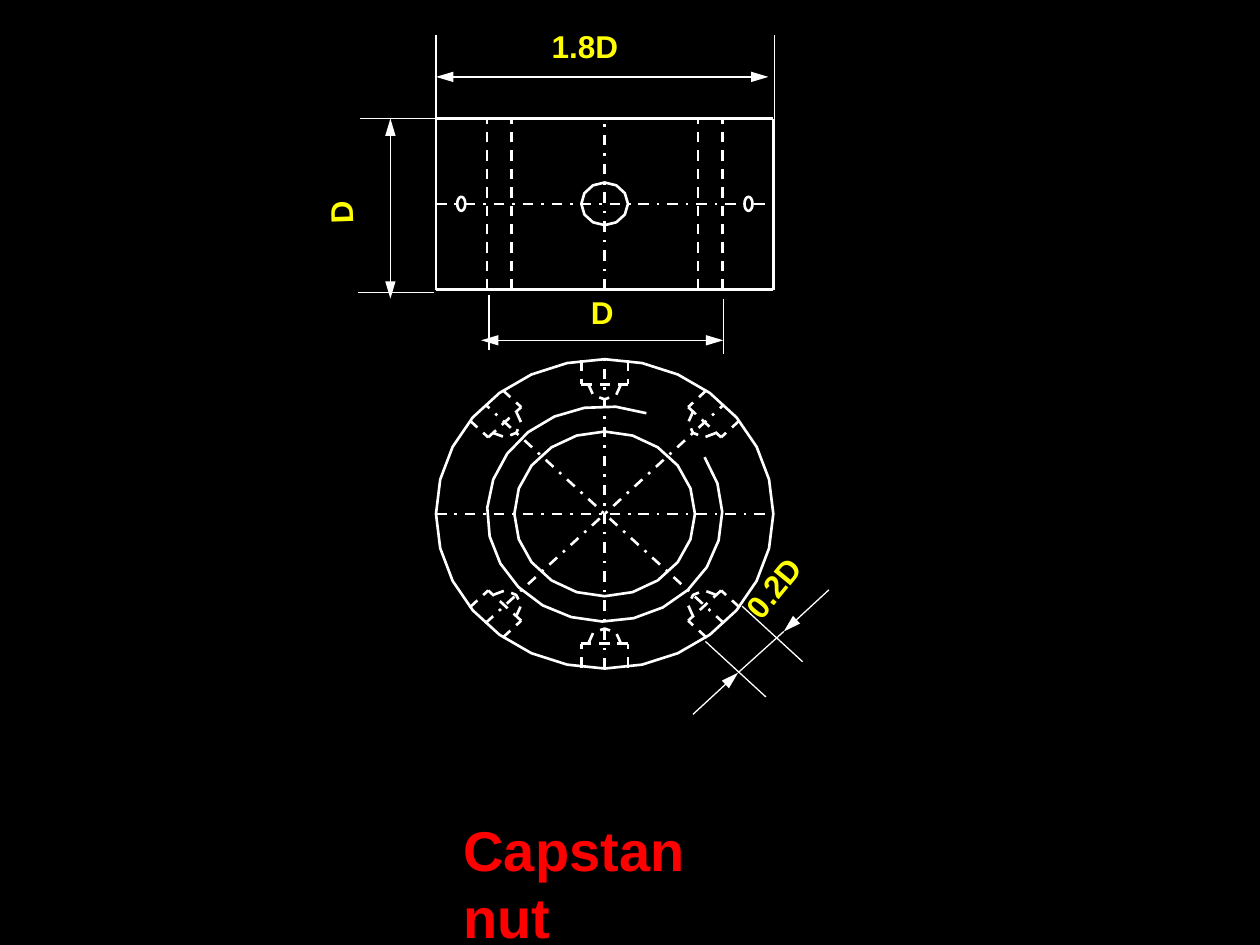
from dataclasses import dataclass
from math import cos, radians, sin

from lxml.etree import SubElement
from pptx import Presentation
from pptx.dml.color import RGBColor
from pptx.enum.dml import MSO_LINE
from pptx.enum.shapes import MSO_CONNECTOR
from pptx.enum.text import MSO_ANCHOR, MSO_AUTO_SIZE, PP_ALIGN
from pptx.oxml.ns import qn
from pptx.util import Cm, Pt


@dataclass(frozen=True)
class Theme:
    """Colours, type sizes and line widths of the drawing."""
    back: RGBColor = RGBColor(0, 0, 0)
    ink: RGBColor = RGBColor(255, 255, 255)
    label: RGBColor = RGBColor(255, 255, 0)
    title: RGBColor = RGBColor(255, 0, 0)
    font: str = "Arial"
    title_size: Pt = Pt(32)
    label_size: Pt = Pt(18)
    outline: Pt = Pt(1.5)
    thin: Pt = Pt(0.75)


THEME = Theme()
CX, PLAN_Y, RADIUS, SQUASH = 12.19, 10.36, 3.4, 0.917
TOP, MID, BOTTOM = 2.39, 4.11, 5.84
LEFT, RIGHT = CX - RADIUS, CX + RADIUS


def apply(obj, formats):
    """Set each named attribute of an object."""
    for name, value in formats.items():
        setattr(obj, name, value)


def style_line(shape, width, dash=None):
    """Give a shape's line its colour, width and dash."""
    shape.line.color.rgb = THEME.ink
    apply(shape.line, {"width": width, "dash_style": dash})


def add_line(s, start, end, width=THEME.outline, dash=None, ends=()):
    """Draw a straight line with arrowheads at the named ends."""
    line = s.shapes.add_connector(
        MSO_CONNECTOR.STRAIGHT, *(Cm(v) for v in (*start, *end)))
    style_line(line, width, dash)
    spPr = line._element.spPr
    for end_name in ends:
        SubElement(spPr.get_or_add_ln(), qn(f"a:{end_name}"),
                   type="triangle", w="med", len="lg")
    SubElement(spPr, qn("a:effectLst"))


def add_outline(s, points, closed=True, dash=None):
    """Draw an unfilled outline through the points."""
    first, *rest = [(Cm(x), Cm(y)) for x, y in points]
    builder = s.shapes.build_freeform(*first)
    builder.add_line_segments(rest, close=closed)
    sp = builder.convert_to_shape()
    sp.fill.background()
    sp.shadow.inherit = False
    style_line(sp, THEME.outline, dash)


def arc_points(cx, cy, rx, ry, sides, start=0, sweep=360):
    """Return the corners of a faceted arc, counterclockwise."""
    angles = [radians(start + sweep * i / sides) for i in range(sides + 1)]
    return [(cx + rx * cos(a), cy - ry * sin(a)) for a in angles]


def plan_point(angle, radial, across=0):
    """Place a point given along and across a radius of the plan view."""
    a = radians(angle)
    return (CX + radial * cos(a) - across * sin(a),
            PLAN_Y - SQUASH * (radial * sin(a) + across * cos(a)))


def write_text(tf, text, size, color):
    """Write one bold line of text."""
    p = tf.paragraphs[0]
    p.alignment = PP_ALIGN.LEFT
    r = p.add_run()
    r.text = text
    apply(r.font, {"name": THEME.font, "size": size, "bold": True})
    r.font.color.rgb = color


def add_label(s, text, left, top, width, rotation=0):
    """Add a dimension label."""
    sp = s.shapes.add_textbox(Cm(left), Cm(top), Cm(width), Cm(1.02))
    sp.rotation = rotation
    apply(sp.text_frame, {"word_wrap": False,
                          "auto_size": MSO_AUTO_SIZE.SHAPE_TO_FIT_TEXT})
    write_text(sp.text_frame, text, THEME.label_size, THEME.label)


def set_title(s, text):
    """Place and format the title."""
    sp = s.shapes.title
    apply(sp, {"left": Cm(9.09), "top": Cm(16.31),
               "width": Cm(7), "height": Cm(1.6)})
    apply(sp.text_frame, {"word_wrap": True, "auto_size": MSO_AUTO_SIZE.NONE,
                          "vertical_anchor": MSO_ANCHOR.TOP})
    write_text(sp.text_frame, text, THEME.title_size, THEME.title)


def add_pocket(s, angle):
    """Draw one hidden radial hole with its drilled tip."""
    mouth, floor, half = 3.38, 2.85, 0.47
    for side in (-half, half):
        add_line(s, plan_point(angle, mouth, side),
                 plan_point(angle, floor, side), dash=MSO_LINE.DASH)
    add_line(s, plan_point(angle, floor, half),
             plan_point(angle, floor, -half), dash=MSO_LINE.DASH)
    tip = ((floor, 0.33), (2.61, 0.23), (2.52, 0),
           (2.61, -0.23), (floor, -0.33))
    add_outline(s, [plan_point(angle, *p) for p in tip], False, MSO_LINE.DASH)


def draw_plan(s):
    """Draw the view along the axis of the nut."""
    add_outline(s, arc_points(CX, PLAN_Y, RADIUS, RADIUS * SQUASH, 28)[:-1])
    add_outline(s, arc_points(CX, PLAN_Y, 1.82, 1.66, 20)[:-1])
    add_outline(s, arc_points(CX, PLAN_Y, 2.37, 2.17, 21, 69.2, 322.6), False)
    for angle in (180, 225, 270, 315):
        add_line(s, plan_point(angle, RADIUS), plan_point(angle, -RADIUS),
                 dash=MSO_LINE.DASH_DOT)
    for angle in (45, 90, 135, 225, 270, 315):
        add_pocket(s, angle)


def draw_elevation(s):
    """Draw the side view of the nut."""
    for y in (TOP, BOTTOM):
        add_line(s, (LEFT, y), (RIGHT, y))
    for x in (LEFT, RIGHT):
        add_line(s, (x, BOTTOM), (x, TOP))
    for offset in (-2.37, -1.88, 1.88, 2.37):
        add_line(s, (CX + offset, BOTTOM), (CX + offset, TOP),
                 dash=MSO_LINE.DASH)
    add_line(s, (LEFT, MID), (RIGHT, MID), dash=MSO_LINE.DASH_DOT)
    add_line(s, (CX, BOTTOM), (CX, TOP), dash=MSO_LINE.DASH_DOT)
    for x, rx, ry, sides in ((CX, 0.47, 0.43, 12), (9.3, 0.08, 0.14, 36),
                             (15.09, 0.08, 0.14, 36)):
        add_outline(s, arc_points(x, MID, rx, ry, sides)[:-1])


def draw_dimensions(s):
    """Draw extension lines, dimension arrows and labels."""
    both, tail = ("headEnd", "tailEnd"), ("tailEnd",)
    for start, end, ends in (
            ((LEFT, TOP), (LEFT, 0.71), ()),
            ((15.62, TOP), (15.62, 0.71), ()),
            ((LEFT, 1.55), (15.49, 1.55), both),
            ((LEFT, TOP), (7.26, TOP), ()),
            ((8.74, 5.89), (7.21, 5.89), ()),
            ((7.87, TOP), (7.87, 6.02), both),
            ((9.86, 5.94), (9.86, 7.06), ()),
            ((14.58, 6.02), (14.58, 7.14), ()),
            ((9.7, 6.86), (14.58, 6.86), both),
            ((14.22, 12.93), (15.44, 14.05), ()),
            ((14.96, 12.22), (16.18, 13.34), ()),
            ((13.97, 14.4), (14.88, 13.56), tail),
            ((16.71, 11.89), (15.8, 12.73), tail),
            ((14.88, 13.56), (15.8, 12.73), ())):
        add_line(s, start, end, THEME.thin, ends=ends)
    for label in (("1.8D", 10.87, 0.43, 1.85), ("D", 6.38, 3.76, 0.97, 268),
                  ("D", 11.66, 5.79, 0.97), ("0.2D", 14.66, 11.33, 1.85, 309.3)):
        add_label(s, *label)


def main():
    """Build the slide and save it."""
    prs = Presentation()
    apply(prs, {"slide_width": Cm(25.4), "slide_height": Cm(19.05)})
    s = prs.slides.add_slide(prs.slide_layouts[5])
    s.background.fill.solid()
    s.background.fill.fore_color.rgb = THEME.back
    set_title(s, "Capstan nut")
    draw_plan(s)
    draw_elevation(s)
    draw_dimensions(s)
    prs.save("out.pptx")


if __name__ == "__main__":
    main()
